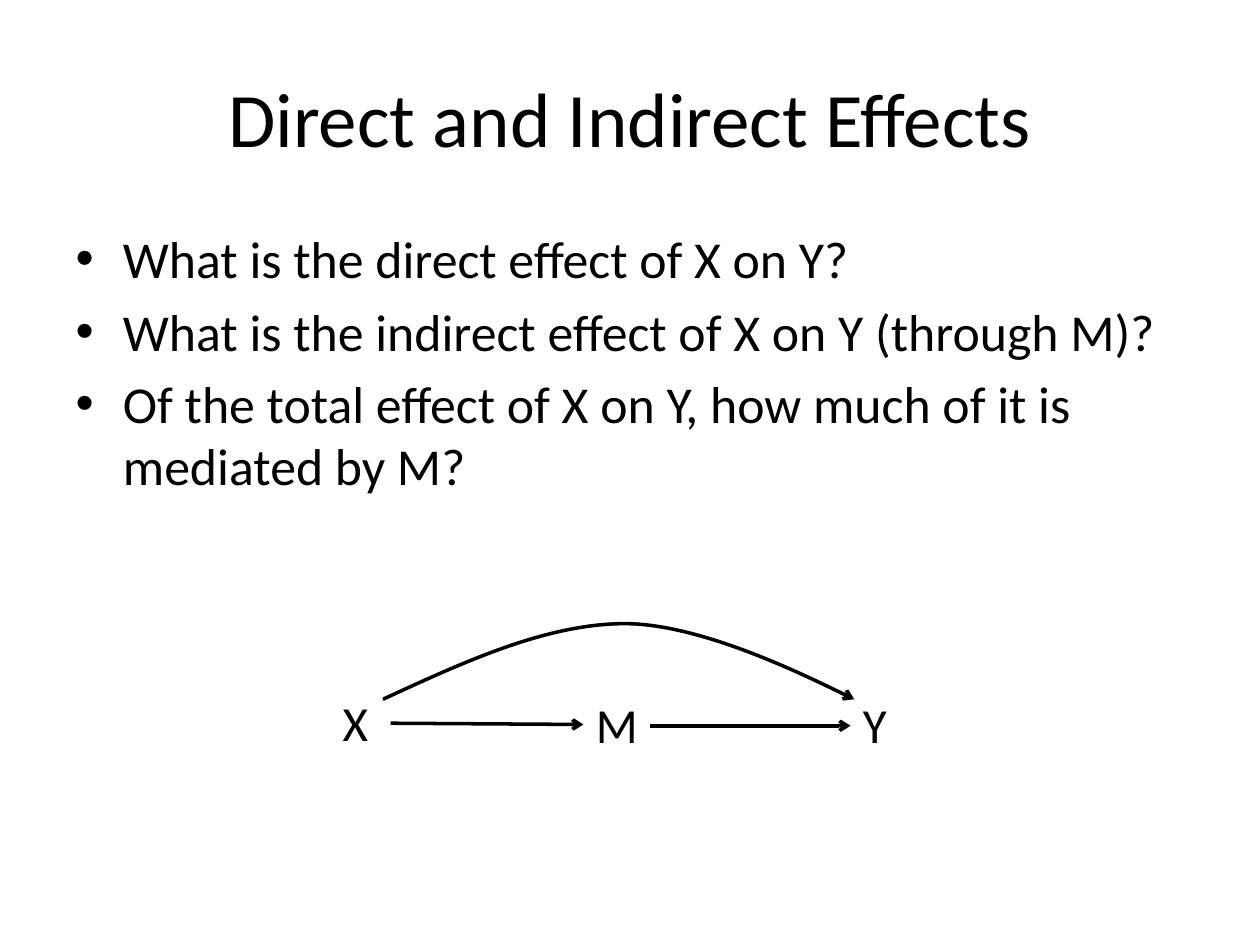
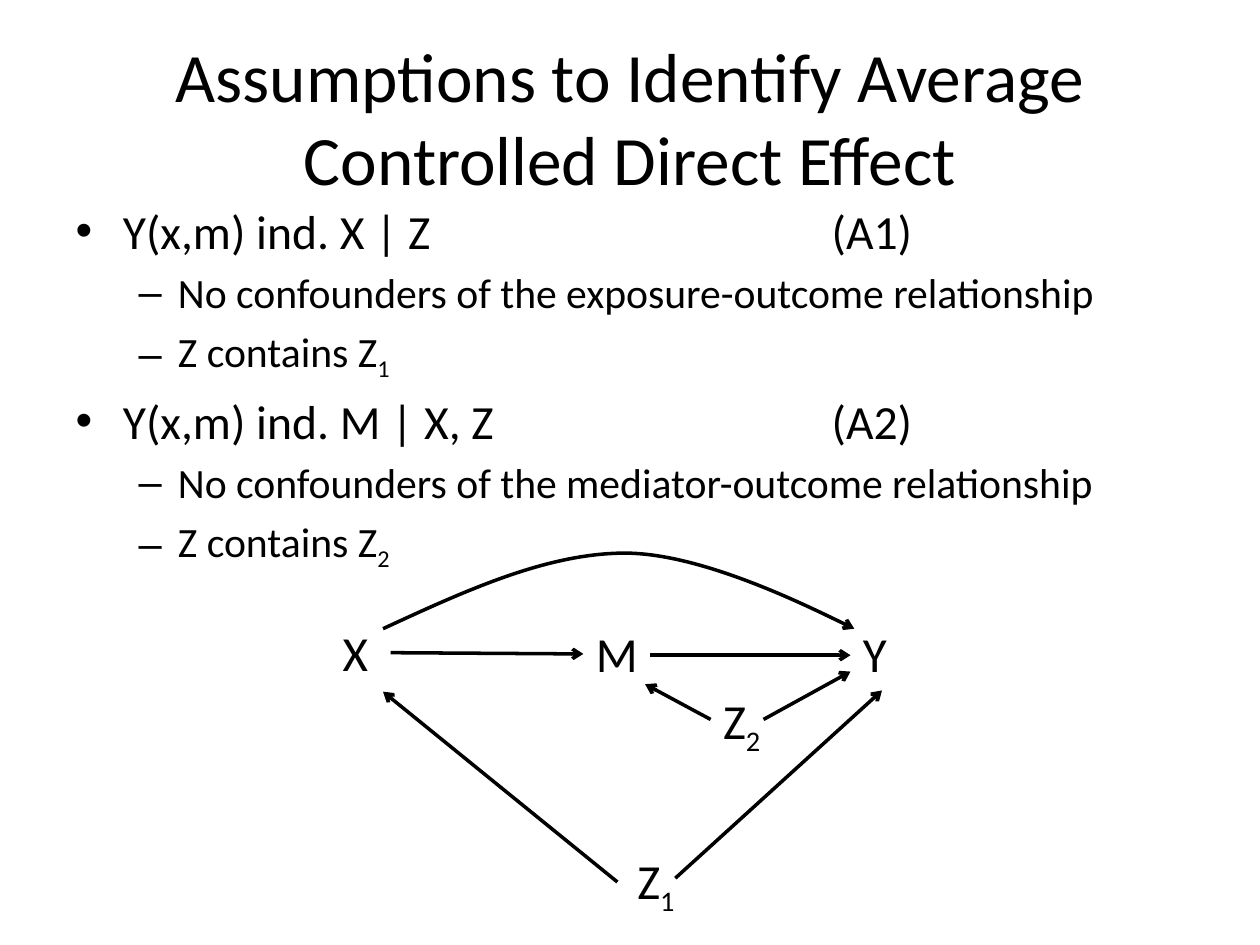
from lxml import etree
from pptx import Presentation
from pptx.dml.color import RGBColor
from pptx.enum.shapes import MSO_CONNECTOR
from pptx.enum.text import MSO_ANCHOR, MSO_AUTO_SIZE, PP_ALIGN
from pptx.oxml.ns import qn
from pptx.util import Pt

STRAIGHT = MSO_CONNECTOR.STRAIGHT
MIDDLE = MSO_ANCHOR.MIDDLE
CENTER = PP_ALIGN.CENTER
NO_FIT = MSO_AUTO_SIZE.NONE
SCALE = 9144
INK = "000000"
FONT = "Calibri"
TAB = 600


def px(size):
    """Turn px into EMU."""
    return size * SCALE


def color(code):
    """Turn a hex string into a colour."""
    return RGBColor.from_string(code)


def place(shape, left, top, width, height):
    """Move and size a shape."""
    shape.left, shape.top = px(left), px(top)
    shape.width, shape.height = px(width), px(height)


def write(para, text, size):
    """Write a line; what follows an underscore is a subscript."""
    base, _, sub = text.partition("_")
    para.text = base
    if sub:
        run = para.add_run()
        run.text = sub
        run.font._element.set("baseline", "-25000")
    for run in para.runs:
        run.font.name = FONT
        run.font.size = Pt(size)
        run.font.color.rgb = color(INK)


def add_tab(para):
    """Give a paragraph one tab stop."""
    tabs = etree.SubElement(para._p.get_or_add_pPr(), qn("a:tabLst"))
    etree.SubElement(tabs, qn("a:tab"), pos=str(px(TAB)), algn="l")


def add_page(deck, title, size):
    """Add a slide with its title."""
    slide = deck.slides.add_slide(deck.slide_layouts[1])
    head = slide.shapes.title
    place(head, 50, 30, 900, 125)
    frame = head.text_frame
    frame.auto_size = NO_FIT
    frame.vertical_anchor = MIDDLE
    write(frame.paragraphs[0], title, size)
    frame.paragraphs[0].alignment = CENTER
    return slide


def fill_list(slide, top, height, sizes, lines):
    """Fill the body with (level, text) lines."""
    body = slide.placeholders[1]
    place(body, 50, top, 900, height)
    frame = body.text_frame
    frame.auto_size = NO_FIT
    for index, (level, text) in enumerate(lines):
        para = frame.add_paragraph() if index else frame.paragraphs[0]
        para.level = level
        write(para, text, sizes[level])
        if "\t" in text:
            add_tab(para)


def add_node(slide, text, left, top, width=49):
    """Add a label of the graph."""
    box = slide.shapes.add_textbox(px(left), px(top), px(width), px(57))
    box.text_frame.word_wrap = True
    write(box.text_frame.paragraphs[0], text, 28)


def style_line(line):
    """Style a line with an arrowhead at its end."""
    line.width = Pt(2)
    line.color.rgb = color(INK)
    etree.SubElement(line._get_or_add_ln(), qn("a:tailEnd"), type="arrow")


def add_arrow(slide, start, end):
    """Add a straight arrow."""
    ends = [px(n) for n in (*start, *end)]
    arrow = slide.shapes.add_connector(STRAIGHT, *ends)
    style_line(arrow.line)
    etree.SubElement(arrow._element.spPr, qn("a:effectLst"))


def add_arc(slide, left, top):
    """Add the curved arrow from X to Y."""
    pen = slide.shapes.build_freeform(left, top + 60, scale=SCALE)
    pen.add_line_segments([(left + 192, top), (left + 374, top + 60)], close=False)
    arc = pen.convert_to_shape()
    bends = [[(65, 30), (130, 0)], [(254, 0), (374, 60)]]
    for step, bend in zip(list(arc._element.iter(qn("a:lnTo"))), bends):
        step.tag = qn("a:cubicBezTo")
        for index, (x, y) in enumerate(bend):
            point = etree.Element(qn("a:pt"), x=str(x), y=str(y))
            step.insert(index, point)
    arc.fill.background()
    arc.shadow.inherit = False
    style_line(arc.line)


def add_graph(slide, top):
    """Add the graph of X, M and Y."""
    for text, left, drop in (("X", 262, 50), ("M", 463, 51), ("Y", 675, 51)):
        add_node(slide, text, left, top + drop)
    add_arrow(slide, (310, top + 79), (463, top + 80))
    add_arrow(slide, (516, top + 81), (675, top + 81))
    add_arc(slide, 304, top)


def main():
    """Build the deck."""
    deck = Presentation()
    deck.slide_width, deck.slide_height = px(1000), px(750)

    slide = add_page(deck, "Direct and Indirect Effects", 44)
    fill_list(slide, 175, 237, (29.6,), [
        (0, "What is the direct effect of X on Y?"),
        (0, "What is the indirect effect of X on Y (through M)?"),
        (0, "Of the total effect of X on Y, how much of it is mediated by M?"),
    ])
    add_graph(slide, 495)

    title = "Assumptions to Identify Average Controlled Direct Effect"
    slide = add_page(deck, title, 39.6)
    fill_list(slide, 155, 271, (27.2, 23.8), [
        (0, "Y(x,m) ind. X | Z\t(A1)"),
        (1, "No confounders of the exposure-outcome relationship"),
        (1, "Z contains Z_1"),
        (0, "Y(x,m) ind. M | X, Z\t(A2)"),
        (1, "No confounders of the mediator-outcome relationship"),
        (1, "Z contains Z_2"),
    ])
    add_graph(slide, 439)
    add_node(slide, "Z_2", 564, 543, 53)
    add_node(slide, "Z_1", 496, 670, 53)
    for start, end in (
        ((606, 571), (675, 533)),
        ((564, 571), (512, 543)),
        ((536, 697), (700, 548)),
        ((490, 700), (304, 549)),
    ):
        add_arrow(slide, start, end)
    deck.save("out.pptx")


if __name__ == "__main__":
    main()
